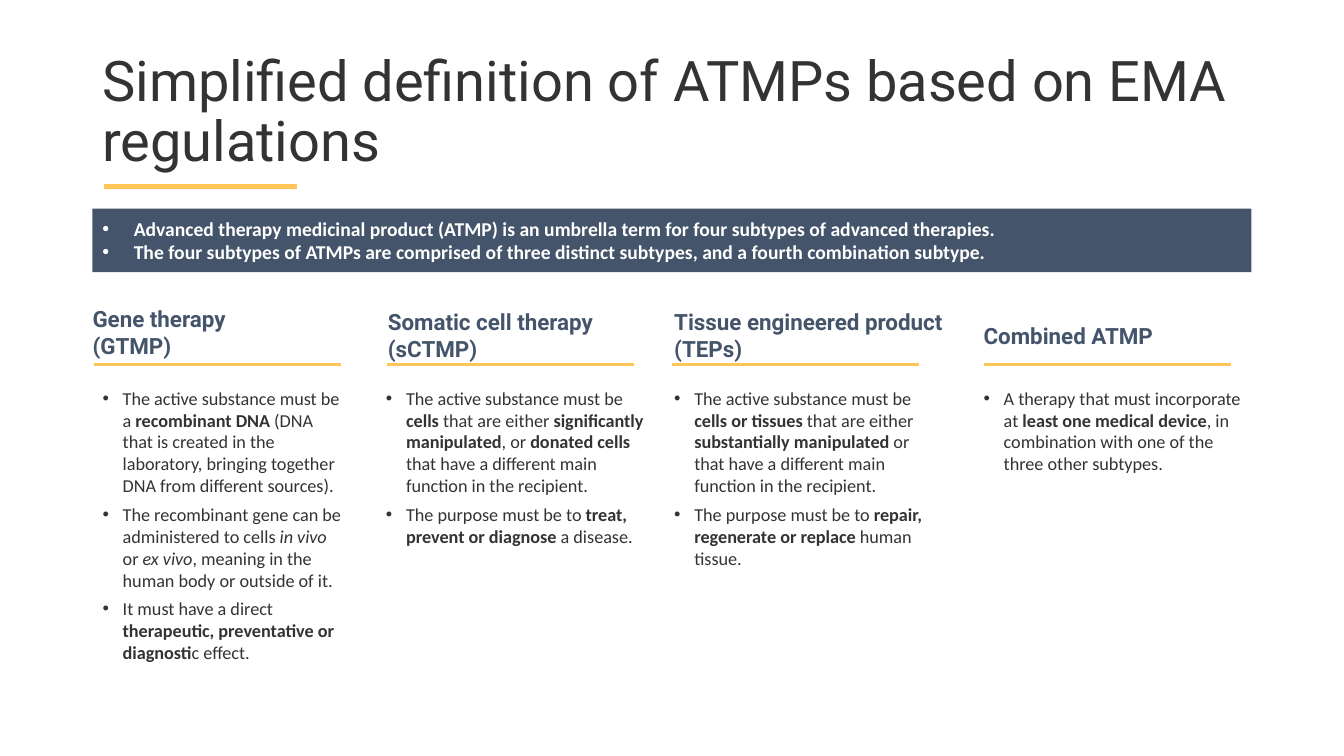
import pptx
import pptx.util
import pptx.dml.color
import pptx.enum.shapes
import pptx.enum.text
import pptx.oxml.ns
from dataclasses import dataclass
from lxml import etree

Pt = pptx.util.Pt
RGB = pptx.dml.color.RGBColor.from_string
ANCHOR = pptx.enum.text.MSO_ANCHOR
qn = pptx.oxml.ns.qn


@dataclass(frozen=True)
class Theme:
    ink: str = "333333"
    slate: str = "44546A"
    amber: str = "FFC556"
    white: str = "FFFFFF"
    heading_font: str = "Roboto"
    body_font: str = "Calibri"
    title_size: float = 40
    heading_size: float = 16
    banner_size: float = 14
    body_size: float = 13


@dataclass(frozen=True)
class Column:
    heading: tuple
    heading_box: tuple
    body_box: tuple
    rule_left: float
    points: tuple


THEME = Theme()
B, I = "bold", "italic"
RULE_TOP, RULE_WIDTH = 260.6, 176.4
BODY_TOP, BODY_HEIGHT = 272.9, 218.2

BANNER = (
    "Advanced therapy medicinal product (ATMP) is an umbrella term for four subtypes of advanced therapies.",
    "The four subtypes of ATMPs are comprised of three distinct subtypes, and a fourth combination subtype.",
)

# Each point is a list of (text, style) runs; boxes are left, top, width, height.
COLUMNS = (
    Column(
        ("Gene therapy", "(GTMP)"), (59, 214.6, 183.6, 46), (66.2, BODY_TOP, 188, BODY_HEIGHT), 67,
        (
            [("The active substance must be a ", ""), ("recombinant DNA", B),
             (" (DNA that is created in the laboratory, bringing together DNA from different sources).", "")],
            [("The recombinant gene can be administered to cells ", ""), ("in vivo ", I), ("or ", ""),
             ("ex vivo", I), (", meaning in the human body or outside of it.", "")],
            [("It must have a direct", ""), (" therapeutic, preventative or diagnosti", B), ("c effect.", "")],
        )),
    Column(
        ("Somatic cell therapy (sCTMP)",), (270, 216.7, 190, 46), (268.6, BODY_TOP, 198.7, BODY_HEIGHT), 276.5,
        (
            [("The active substance must be ", ""), ("cells", B), (" that are either ", ""),
             ("significantly manipulated", B), (", or ", ""), ("donated cells ", B),
             ("that have a different main function in the recipient.", "")],
            [("The purpose must be to ", ""), ("treat, prevent or diagnose ", B), ("a disease.", "")],
        )),
    Column(
        ("Tissue engineered product (TEPs)",), (474.5, 216.7, 231.8, 46),
        (474.5, BODY_TOP, 198.7, BODY_HEIGHT), 480.2,
        (
            [("The active substance must be ", ""), ("cells or tissues ", B), ("that are either ", ""),
             ("substantially manipulated ", B), ("or that have a different main function in the recipient.", "")],
            [("The purpose must be to ", ""), ("repair, regenerate or replace ", B), ("human tissue.", "")],
        )),
    Column(
        ("Combined ATMP",), (695.5, 226.8, 183.6, 26.6), (695.5, BODY_TOP, 198.7, BODY_HEIGHT), 702.7,
        (
            [("A therapy that must incorporate at ", ""), ("least one medical device", B),
             (", in combination with one of the three other subtypes.", "")],
        )),
)


def add_runs(p, runs, font, size, color):
    for text, style in runs:
        r = p.add_run()
        r.text = text
        r.font.name, r.font.size = font, Pt(size)
        r.font.color.rgb = RGB(color)
        r.font.bold = style == B
        r.font.italic = style == I


def fill_text(tf, paragraphs, font, size, color, indent=0, gap=0):
    """Write paragraphs of runs, bulleted with a hanging indent if one is given."""
    tf.word_wrap = True
    for n, runs in enumerate(paragraphs):
        p = tf.paragraphs[0] if n == 0 else tf.add_paragraph()
        p.alignment = pptx.enum.text.PP_ALIGN.LEFT
        if n and gap:
            p.space_before = Pt(gap)
        if indent:
            pPr = p._p.get_or_add_pPr()
            pPr.set("marL", str(Pt(indent)))
            pPr.set("indent", str(-Pt(indent)))
            etree.SubElement(pPr, qn("a:buFont")).set("typeface", "Arial")
            etree.SubElement(pPr, qn("a:buChar")).set("char", "•")
        add_runs(p, runs, font, size, color)


def add_text_box(s, box):
    return s.shapes.add_textbox(*map(Pt, box)).text_frame


def add_rule(s, left, top, width, weight):
    line = s.shapes.add_connector(pptx.enum.shapes.MSO_CONNECTOR.STRAIGHT,
                                  Pt(left), Pt(top), Pt(left + width), Pt(top))
    line.line.color.rgb = RGB(THEME.amber)
    line.line.width = Pt(weight)
    etree.SubElement(line._element.spPr, qn("a:effectLst"))


def add_title(s, box, text):
    left, top, width, height = box
    add_rule(s, left + 8, top + height, 138.2, 4)
    tf = add_text_box(s, box)
    tf.vertical_anchor = ANCHOR.MIDDLE
    fill_text(tf, [[(text, "")]], THEME.heading_font, THEME.title_size, THEME.ink)
    tf.paragraphs[0].line_spacing = 0.9


def add_banner(s, box, lines):
    sp = s.shapes.add_shape(pptx.enum.shapes.MSO_SHAPE.RECTANGLE, *map(Pt, box))
    sp.shadow.inherit = False
    sp.fill.solid()
    sp.fill.fore_color.rgb = RGB(THEME.slate)
    sp.line.fill.background()
    tf = sp.text_frame
    tf.vertical_anchor = ANCHOR.MIDDLE
    fill_text(tf, [[(line, B)] for line in lines],
              THEME.body_font, THEME.banner_size, THEME.white, indent=22.5)


def add_column(s, column):
    fill_text(add_text_box(s, column.heading_box), [[(line, B)] for line in column.heading],
              THEME.heading_font, THEME.heading_size, THEME.slate)
    add_rule(s, column.rule_left, RULE_TOP, RULE_WIDTH, 2.25)
    fill_text(add_text_box(s, column.body_box), column.points,
              THEME.body_font, THEME.body_size, THEME.ink, indent=14.4, gap=5)


def main():
    prs = pptx.Presentation()
    prs.slide_width, prs.slide_height = Pt(960), Pt(540)
    s = prs.slides.add_slide(prs.slide_layouts[6])
    add_title(s, (66, 28.8, 828, 104.4), "Simplified definition of ATMPs based on EMA regulations")
    add_banner(s, (66, 149, 828, 45.4), BANNER)
    for column in COLUMNS:
        add_column(s, column)
    prs.save("out.pptx")


if __name__ == "__main__":
    main()
